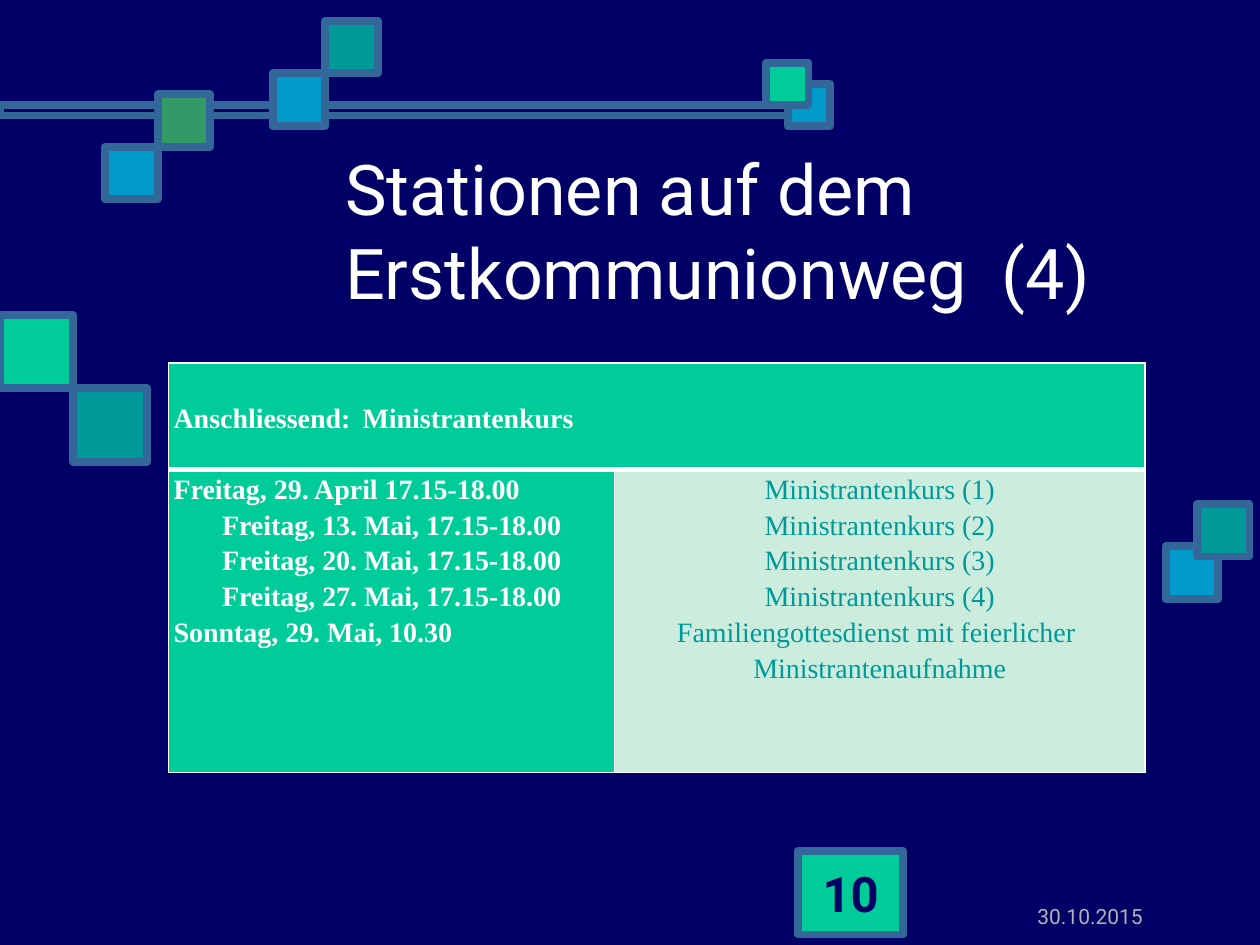
"""Build the slide with the dates of the altar server course."""
from lxml.etree import SubElement
from pptx import Presentation
from pptx.dml.color import RGBColor
from pptx.enum.shapes import MSO_SHAPE
from pptx.enum.text import MSO_ANCHOR, PP_ALIGN
from pptx.oxml.ns import qn
from pptx.util import Cm, Pt

NAVY = RGBColor(0x00, 0x00, 0x66)
STEEL = RGBColor(0x33, 0x66, 0x99)
BLUE = RGBColor(0x00, 0x99, 0xCC)
MINT = RGBColor(0x00, 0xCC, 0x99)
TEAL = RGBColor(0x00, 0x99, 0x99)
GREEN = RGBColor(0x33, 0x99, 0x66)
PALE = RGBColor(0xCC, 0xEC, 0xDE)
GREY = RGBColor(0xB2, 0xB2, 0xB2)
WHITE = RGBColor(0xFF, 0xFF, 0xFF)
LEFT, CENTER, RIGHT = PP_ALIGN.LEFT, PP_ALIGN.CENTER, PP_ALIGN.RIGHT


def add_box(x, y, w, h, color):
    sp = s.shapes.add_shape(MSO_SHAPE.RECTANGLE, Cm(x), Cm(y), Cm(w), Cm(h))
    sp.shadow.inherit = False
    sp.line.color.rgb = STEEL
    sp.line.width = Pt(4.5)
    if color is None:
        sp.fill.background()
    else:
        sp.fill.solid()
        sp.fill.fore_color.rgb = color
    return sp


def write(tf, lines, color, font, spacing=None):
    for i, (text, align) in enumerate(lines):
        p = tf.paragraphs[0] if i == 0 else tf.add_paragraph()
        p.alignment = align
        p.line_spacing = spacing
        r = p.add_run()
        r.text = text
        r.font.color.rgb = color
        for name, value in font.items():
            setattr(r.font, name, value)


prs = Presentation()
prs.slide_width, prs.slide_height = Cm(25.4), Cm(19.05)
s = prs.slides.add_slide(prs.slide_layouts[6])
s.background.fill.solid()
s.background.fill.fore_color.rgb = NAVY

add_box(0, 2.12, 16.3, 0.21, None)
squares = [
    (15.88, 1.69, 0.85, BLUE), (15.45, 1.27, 0.85, MINT),
    (23.5, 11.01, 1.06, BLUE), (24.13, 10.16, 1.06, TEAL),
    (0, 6.35, 1.48, MINT), (1.48, 7.83, 1.48, TEAL),
    (5.5, 1.48, 1.06, BLUE), (2.12, 2.96, 1.06, BLUE),
    (3.18, 1.9, 1.06, GREEN), (6.56, 0.42, 1.06, TEAL),
]
for x, y, size, color in squares:
    add_box(x, y, size, size, color)

texts = [
    (6.71, 2.62, 17.5, 4.01, "Stationen auf dem Erstkommunionweg  (4)", 40, WHITE, LEFT, MSO_ANCHOR.MIDDLE),
    (18.21, 18.08, 5.08, 0.76, "30.10.2015", 12, GREY, RIGHT, MSO_ANCHOR.BOTTOM),
]
for x, y, w, h, text, size, color, align, anchor in texts:
    tf = s.shapes.add_textbox(Cm(x), Cm(y), Cm(w), Cm(h)).text_frame
    tf.word_wrap = True
    tf.vertical_anchor = anchor
    write(tf, [(text, align)], color, {"name": "Roboto", "size": Pt(size)})

tf = add_box(16.09, 17.15, 2.12, 1.69, MINT).text_frame
tf.word_wrap = False
tf.vertical_anchor = MSO_ANCHOR.MIDDLE
write(tf, [("10", CENTER)], NAVY, {"name": "Roboto", "size": Pt(28), "bold": True})

tbl = s.shapes.add_table(2, 2, Cm(3.4), Cm(7.32), Cm(19.68), Cm(8.25)).table
for column, width in zip(tbl.columns, (8.99, 10.69)):
    column.width = Cm(width)
for row, height in zip(tbl.rows, (2.15, 6.1)):
    row.height = Cm(height)
tbl.cell(0, 0).merge(tbl.cell(0, 1))

heading = [("Anschliessend:\tMinistrantenkurs", LEFT)]
dates = [
    ("Freitag, 29. April 17.15-18.00", LEFT),
    *[(f"Freitag, {day}. Mai, 17.15-18.00", CENTER) for day in (13, 20, 27)],
    ("Sonntag, 29. Mai, 10.30", LEFT),
]
events = [
    *[(f"Ministrantenkurs ({n})", CENTER) for n in range(1, 5)],
    ("Familiengottesdienst mit feierlicher ", CENTER),
    ("Ministrantenaufnahme", CENTER),
]
cells = [
    (0, 0, heading, MINT, WHITE, True, MSO_ANCHOR.MIDDLE),
    (0, 1, [], MINT, WHITE, True, MSO_ANCHOR.MIDDLE),
    (1, 0, dates, MINT, WHITE, True, MSO_ANCHOR.TOP),
    (1, 1, events, PALE, TEAL, False, MSO_ANCHOR.TOP),
]
cell_format = {"margin_left": Cm(0.1), "margin_right": Cm(0.1), "margin_top": 0, "margin_bottom": 0}
for row, col, lines, fill, color, bold, anchor in cells:
    cell = tbl.cell(row, col)
    for name, value in cell_format.items():
        setattr(cell, name, value)
    cell.vertical_anchor = anchor
    tcPr = cell._tc.get_or_add_tcPr()
    for side in "LRTB":
        width = 3 if (row, side) in ((0, "B"), (1, "T")) else 1
        ln = SubElement(tcPr, qn(f"a:ln{side}"), w=str(Pt(width)))
        SubElement(SubElement(ln, qn("a:solidFill")), qn("a:srgbClr"), val=str(WHITE))
    cell.fill.solid()
    cell.fill.fore_color.rgb = fill
    write(cell.text_frame, lines, color, {"name": "Times New Roman", "size": Pt(16), "bold": bold}, 1.15)

prs.save("out.pptx")
